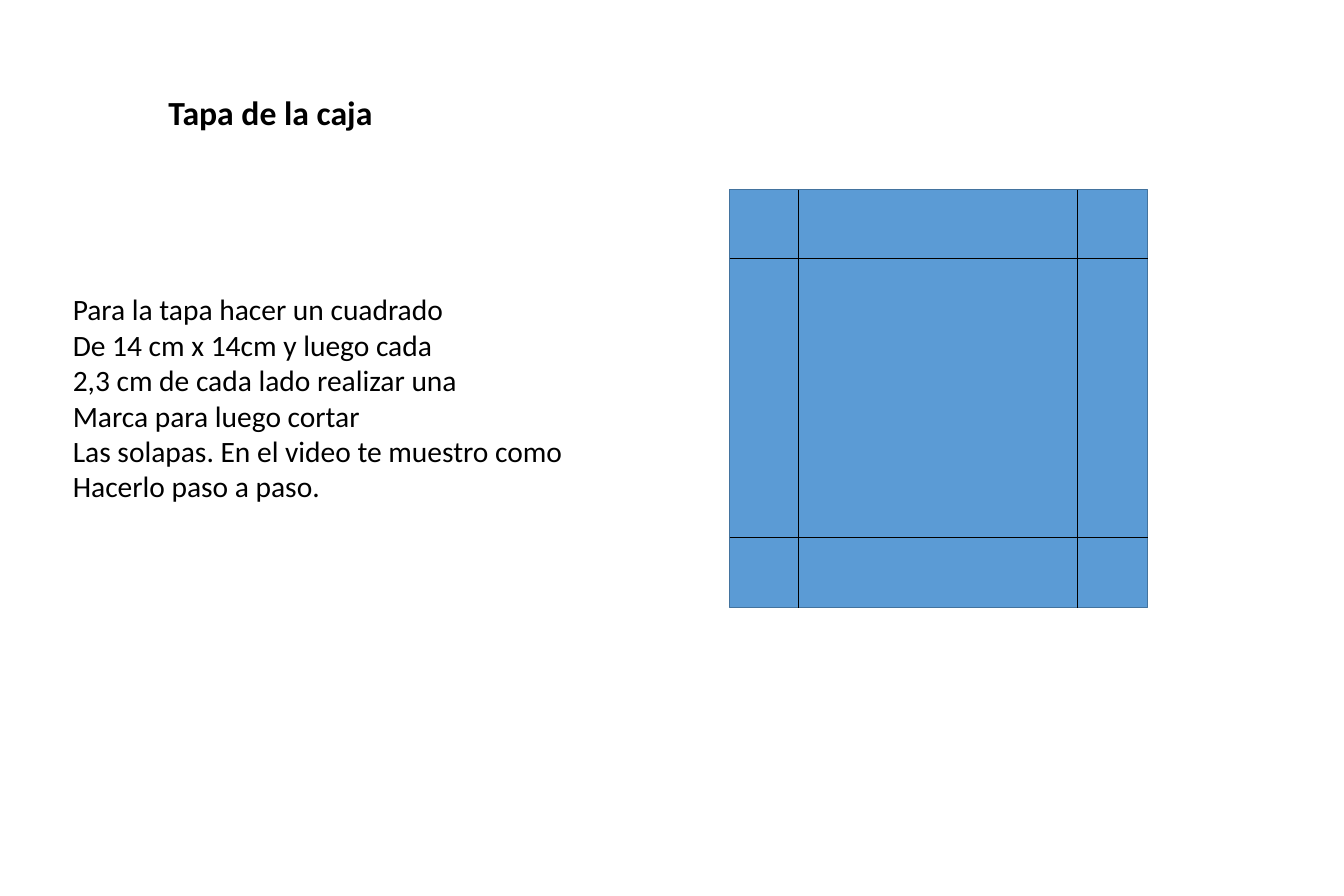
from lxml import etree
from pptx import Presentation
from pptx.dml.color import RGBColor
from pptx.enum import shapes, text
from pptx.oxml.ns import qn
from pptx.util import Pt

LEFT, TOP, SIDE = 692.64, 180, 396.72
FOLDS = (64.8, 329.76)
STEPS = (
    "Para la tapa hacer un cuadrado",
    "De 14 cm x 14cm y luego cada",
    "2,3 cm de cada lado realizar una",
    "Marca para luego cortar",
    "Las solapas. En el video te muestro como",
    "Hacerlo paso a paso.",
)


def color(hex_code):
    """Turn a hex string into a colour."""
    return RGBColor.from_string(hex_code)


def fill_placeholder(sp, lines, box, size, bold=False):
    """Place a placeholder and write plain left-aligned lines in it."""
    sp.left, sp.top, sp.width, sp.height = map(Pt, box)
    tf = sp.text_frame
    tf.text = "\n".join(lines)
    tf.word_wrap = False
    tf.auto_size = text.MSO_AUTO_SIZE.SHAPE_TO_FIT_TEXT
    tf.vertical_anchor = text.MSO_ANCHOR.TOP
    for p in tf.paragraphs:
        p.alignment = text.PP_ALIGN.LEFT
        p.space_before = Pt(0)
        pPr = p._p.get_or_add_pPr()
        pPr.set("marL", "0")
        pPr.set("indent", "0")
        etree.SubElement(pPr, qn("a:buNone"))
        for r in p.runs:
            r.font.name, r.font.size, r.font.bold = "Calibri", Pt(size), bold
            r.font.color.rgb = color("000000")


def add_square(s):
    """Draw the sheet of the lid."""
    sp = s.shapes.add_shape(shapes.MSO_SHAPE.RECTANGLE,
                            Pt(LEFT), Pt(TOP), Pt(SIDE), Pt(SIDE))
    sp.shadow.inherit = False
    sp.fill.solid()
    sp.fill.fore_color.rgb = color("5B9BD5")
    sp.line.color.rgb = color("43739E")
    sp.line.width = Pt(1)


def add_fold(s, x1, y1, x2, y2):
    """Draw one thin fold line."""
    line = s.shapes.add_connector(shapes.MSO_CONNECTOR.STRAIGHT,
                                  Pt(x1), Pt(y1), Pt(x2), Pt(y2))
    line.line.color.rgb = color("000000")
    line.line.width = Pt(0.5)
    etree.SubElement(line._element.spPr, qn("a:effectLst"))


def main():
    """Build the slide and save it."""
    prs = Presentation()
    prs.slide_width, prs.slide_height = Pt(1275.84), Pt(850.32)
    s = prs.slides.add_slide(prs.slide_layouts[1])
    fill_placeholder(s.shapes.title, ["Tapa de la caja"],
                     (152.64, 83.52, 210.24, 46.08), 32, bold=True)
    fill_placeholder(s.placeholders[1], STEPS,
                     (61.92, 272.88, 483.84, 210.96), 28)
    add_square(s)
    for fold in FOLDS:
        add_fold(s, LEFT + fold, TOP, LEFT + fold, TOP + SIDE)
        add_fold(s, LEFT, TOP + fold, LEFT + SIDE, TOP + fold)
    prs.save("out.pptx")


if __name__ == "__main__":
    main()
